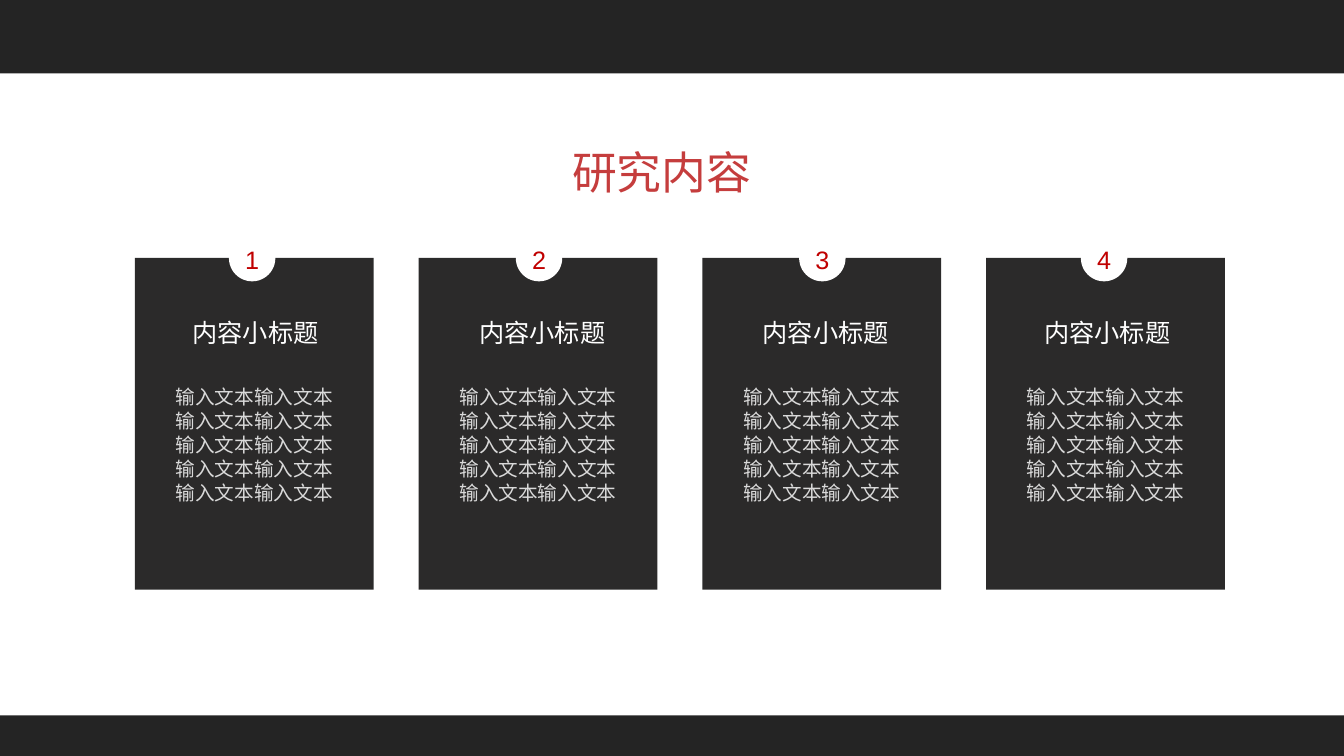
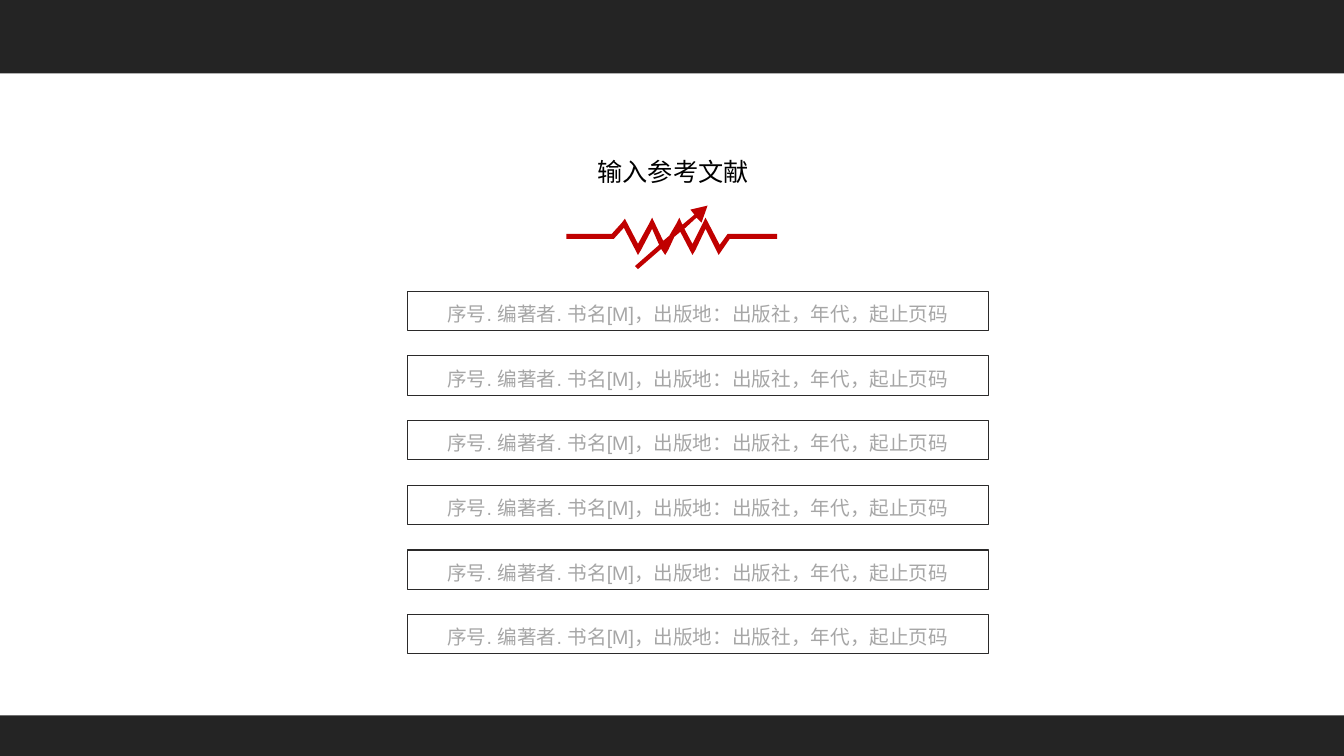
from lxml import etree
from pptx import Presentation
from pptx import util as u
from pptx.dml.color import RGBColor
from pptx.enum import shapes, text
from pptx.oxml.ns import qn

BAND, CARD, RED, TITLE_RED = "242424", "2B2A2A", "C00000", "C53D3D"
WHITE, BLACK, PALE, GREY = "FFFFFF", "000000", "D9D9D9", "A6A6A6"
LATIN, CJK, CJK_TITLE = "Arial", "Noto Sans CJK SC", "Noto Sans CJK JP"
SHAPE, ANCHOR, ALIGN = shapes.MSO_SHAPE, text.MSO_ANCHOR, text.PP_ALIGN
INSET = (0.25, 0.13, 0.25, 0.13)

# Zigzag with an arrow through it, in hundredths of an inch
ZIGZAG = [
    (702, 204), (696, 221), (691, 216), (679, 227), (687, 242), (697, 222),
    (700, 216), (714, 243), (722, 232), (771, 232), (771, 237), (724, 237),
    (713, 253), (700, 227), (690, 248), (687, 253), (675, 230), (669, 235),
    (663, 248), (660, 253), (656, 247), (633, 267), (630, 264), (654, 243),
    (647, 227), (636, 248), (633, 253), (619, 226), (609, 237), (562, 237),
    (562, 232), (607, 232), (617, 221), (620, 217), (633, 242), (644, 222),
    (647, 216), (658, 239), (664, 234), (671, 222), (674, 216), (677, 223),
    (689, 213), (685, 208),
]


def color(value):
    return RGBColor.from_string(value)


def write(box, lines, size=18, ink=BLACK, font=CJK, align=ALIGN.LEFT,
          anchor=ANCHOR.MIDDLE, inset=INSET, spacing=None):
    """Fill a shape with one paragraph per line."""
    frame = box.text_frame
    frame.word_wrap = True
    frame.vertical_anchor = anchor
    (frame.margin_left, frame.margin_top,
     frame.margin_right, frame.margin_bottom) = map(u.Cm, inset)
    for index, line in enumerate(lines):
        para = frame.add_paragraph() if index else frame.paragraphs[0]
        para.alignment = align
        if spacing:
            para.line_spacing = u.Pt(spacing)
        span = para.add_run()
        span.text = line
        span.font.size = u.Pt(size)
        span.font.color.rgb = color(ink)
        span.font.name = font
        east = etree.Element(qn("a:ea"))
        east.set("typeface", CJK if font == LATIN else font)
        span.font._element.find(qn("a:latin")).addnext(east)


class Slides:
    """The deck, its shared style and the current page."""

    def __init__(self):
        self.deck = Presentation()
        self.deck.slide_width = u.Cm(33.87)
        self.deck.slide_height = u.Cm(19.05)
        self.page = None

    def new_page(self):
        self.page = self.deck.slides.add_slide(self.deck.slide_layouts[6])
        self.shape(0, 0, 33.87, 1.85, fill=BAND)
        self.shape(0, 18.03, 33.87, 1.02, fill=BAND)

    def paint(self, box, fill=None, line=None):
        box.shadow.inherit = False
        if fill:
            box.fill.solid()
            box.fill.fore_color.rgb = color(fill)
        else:
            box.fill.background()
        if line:
            box.line.color.rgb = color(line)
            box.line.width = u.Pt(0.75)
        else:
            box.line.fill.background()

    def shape(self, left, top, width, height, kind=SHAPE.RECTANGLE,
              fill=None, line=None):
        box = self.page.shapes.add_shape(
            kind, u.Cm(left), u.Cm(top), u.Cm(width), u.Cm(height))
        self.paint(box, fill, line)
        return box

    def label(self, left, top, width, height, words, **style):
        box = self.page.shapes.add_textbox(
            u.Cm(left), u.Cm(top), u.Cm(width), u.Cm(height))
        write(box, [words], **style)

    def outline(self, points, fill):
        builder = self.page.shapes.build_freeform(
            *points[0], scale=u.Cm(2.54) / 100)
        builder.add_line_segments(points[1:], close=True)
        self.paint(builder.convert_to_shape(), fill)

    def card(self, left, number, badge_offset):
        body = self.shape(left, 6.5, 6.02, 8.36, fill=CARD)
        write(body, ["输入文本输入文本"] * 5, size=14, ink=PALE,
              align=ALIGN.CENTER, anchor=ANCHOR.TOP,
              inset=(0.25, 3.2, 0.25, 0.13), spacing=17)
        badge_left = left + badge_offset
        badge = self.shape(badge_left, 5.92, 1.17, 1.17,
                           SHAPE.FLOWCHART_CONNECTOR, fill=WHITE)
        write(badge, [str(number)], ink=RED, font=LATIN, align=ALIGN.CENTER,
              anchor=ANCHOR.BOTTOM, inset=(0, 0, 0, 0))
        self.label(badge_left - 1.17, 7.87, 3.99, 1.02, "内容小标题",
                   ink=WHITE)

    def reference(self, top):
        row = self.shape(10.26, top, 14.66, 0.99, line=CARD)
        write(row, ["序号. 编著者. 书名[M]，出版地：出版社，年代，起止页码"],
              size=14, ink=GREY, font=LATIN, align=ALIGN.CENTER,
              anchor=ANCHOR.BOTTOM)


def main():
    slides = Slides()

    # Research content: four numbered cards
    slides.new_page()
    slides.label(14.17, 3.5, 8.18, 1.63, "研究内容", size=32, ink=TITLE_RED,
                 font=CJK_TITLE)
    for index, badge_offset in enumerate((2.37, 2.45, 2.44, 2.39)):
        slides.card(3.4 + 7.15 * index, index + 1, badge_offset)

    # References: six framed rows
    slides.new_page()
    slides.outline(ZIGZAG, RED)
    slides.label(14.81, 3.81, 4.85, 1.02, "输入参考文献")
    for index in range(6):
        slides.reference(7.34 + 1.63 * index)

    slides.deck.save("out.pptx")


if __name__ == "__main__":
    main()
